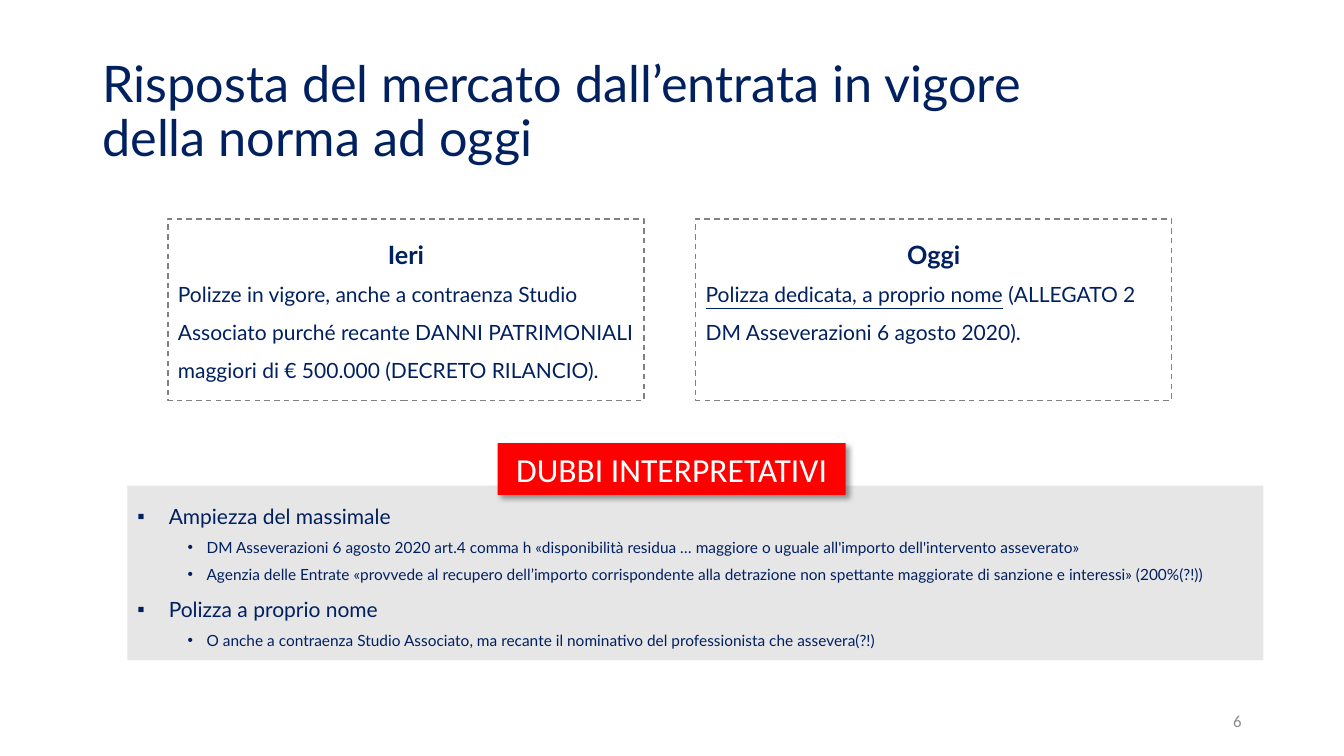
from lxml import etree
from pptx import Presentation
from pptx import util as u
from pptx.dml import color
from pptx.enum import dml, shapes, text
from pptx.oxml import ns

Pt = u.Pt
AL = text.PP_ALIGN
NAVY, GREY, RED, PALE = "002060", "808080", "FF0000", "E7E6E6"


def rgb(code):
    return color.RGBColor.from_string(code)


def sub(node, tag, **attrs):
    return etree.SubElement(node, ns.qn(tag), {k: str(v) for k, v in attrs.items()})


def frame(shape, anchor):
    tf = shape.text_frame
    tf.word_wrap = True
    tf.vertical_anchor = anchor
    return tf


def label(slide, spot, anchor):
    box = slide.shapes.add_textbox(*(Pt(v) for v in spot))
    return frame(box, anchor)


def panel(slide, spot, fill=None, dash=None):
    box = slide.shapes.add_shape(shapes.MSO_SHAPE.RECTANGLE, *(Pt(v) for v in spot))
    box.shadow.inherit = False
    if fill:
        box.fill.solid()
        box.fill.fore_color.rgb = rgb(fill)
    else:
        box.fill.background()
    if dash:
        box.line.color.rgb = rgb(dash)
        box.line.width = Pt(1)
        box.line.dash_style = dml.MSO_LINE.DASH
    else:
        box.line.fill.background()
    return box


def shade(box):
    # Soft shadow towards the lower right
    fx = box._element.spPr.find(ns.qn("a:effectLst"))
    drop = sub(fx, "a:outerShdw", blurRad=Pt(4), dist=Pt(3), dir=45 * 60000,
               algn="tl", rotWithShape=0)
    tint = sub(drop, "a:srgbClr", val="000000")
    sub(tint, "a:alpha", val=40000)


def para(tf, align=AL.LEFT, space=1.0):
    p = tf.paragraphs[0]
    if p.runs:
        p = tf.add_paragraph()
    p.alignment = align
    p.line_spacing = space
    return p


def run(p, words, size, code=NAVY, face="Lato", bold=False, under=False):
    r = p.add_run()
    r.text = words
    f = r.font
    f.size, f.name, f.bold, f.underline = Pt(size), face, bold, under
    f.color.rgb = rgb(code)


def bullet(p, mark, left, hang):
    ppr = p._p.get_or_add_pPr()
    ppr.set("marL", str(Pt(left)))
    ppr.set("indent", str(-Pt(hang)))
    sub(ppr, "a:buFont", typeface="Arial")
    sub(ppr, "a:buChar", char=mark)


def card(slide, left, head, parts):
    tf = frame(panel(slide, (left, 156.5, 340, 129.5), dash=GREY), text.MSO_ANCHOR.TOP)
    run(para(tf, AL.CENTER, 1.5), head, 18, bold=True)
    p = para(tf, space=1.5)
    for words, under in parts:
        run(p, words, 15, under=under)


def doubts(slide, topics):
    tf = frame(panel(slide, (91, 347, 811.5, 124.5), PALE), text.MSO_ANCHOR.TOP)
    for topic, notes in topics:
        p = para(tf, AL.JUSTIFY, 1.5)
        bullet(p, "▪", 22.5, 22.5)
        run(p, topic, 15)
        for note in notes:
            p = para(tf, AL.JUSTIFY, 1.5)
            p.level = 1
            bullet(p, "•", 49.5, 13.5)
            run(p, note, 11)


def main():
    deck = Presentation()
    deck.slide_width, deck.slide_height = Pt(960), Pt(540)
    slide = deck.slides.add_slide(deck.slide_layouts[6])
    mid = text.MSO_ANCHOR.MIDDLE

    # Doubts on how to read the rule
    doubts(slide, [
        ("Ampiezza del massimale", [
            "DM Asseverazioni 6 agosto 2020 art.4 comma h «disponibilità residua … "
            "maggiore o uguale all'importo dell'intervento asseverato»",
            "Agenzia delle Entrate «provvede al recupero dell’importo corrispondente "
            "alla detrazione non spettante maggiorate di sanzione e interessi» (200%(?!))",
        ]),
        ("Polizza a proprio nome", [
            "O anche a contraenza Studio Associato, ma recante il nominativo "
            "del professionista che assevera(?!)",
        ]),
    ])

    # Title
    p = para(label(slide, (66, 28.75, 828, 104.5), mid), space=0.9)
    run(p, "Risposta del mercato dall’entrata in vigore ", 36)
    p.add_line_break()
    run(p, "della norma ad oggi", 36)

    # Page number
    run(para(label(slide, (678, 500.5, 216, 28.75), mid), AL.RIGHT),
        "6", 12, "8C8C8C", "Calibri")

    # Red banner
    flag = panel(slide, (355.5, 316.5, 248.5, 37), RED)
    shade(flag)
    run(para(frame(flag, mid), AL.CENTER),
        "DUBBI INTERPRETATIVI", 24, "FFFFFF", "Calibri")

    # Yesterday and today
    card(slide, 120, "Ieri", [
        ("Polizze in vigore, anche a contraenza Studio Associato purché recante "
         "DANNI PATRIMONIALI maggiori di € 500.000 (DECRETO RILANCIO).", False)])
    card(slide, 497, "Oggi", [
        ("Polizza dedicata, a proprio nome", True),
        (" (ALLEGATO 2 DM Asseverazioni 6 agosto 2020).", False)])

    deck.save("out.pptx")


if __name__ == "__main__":
    main()
